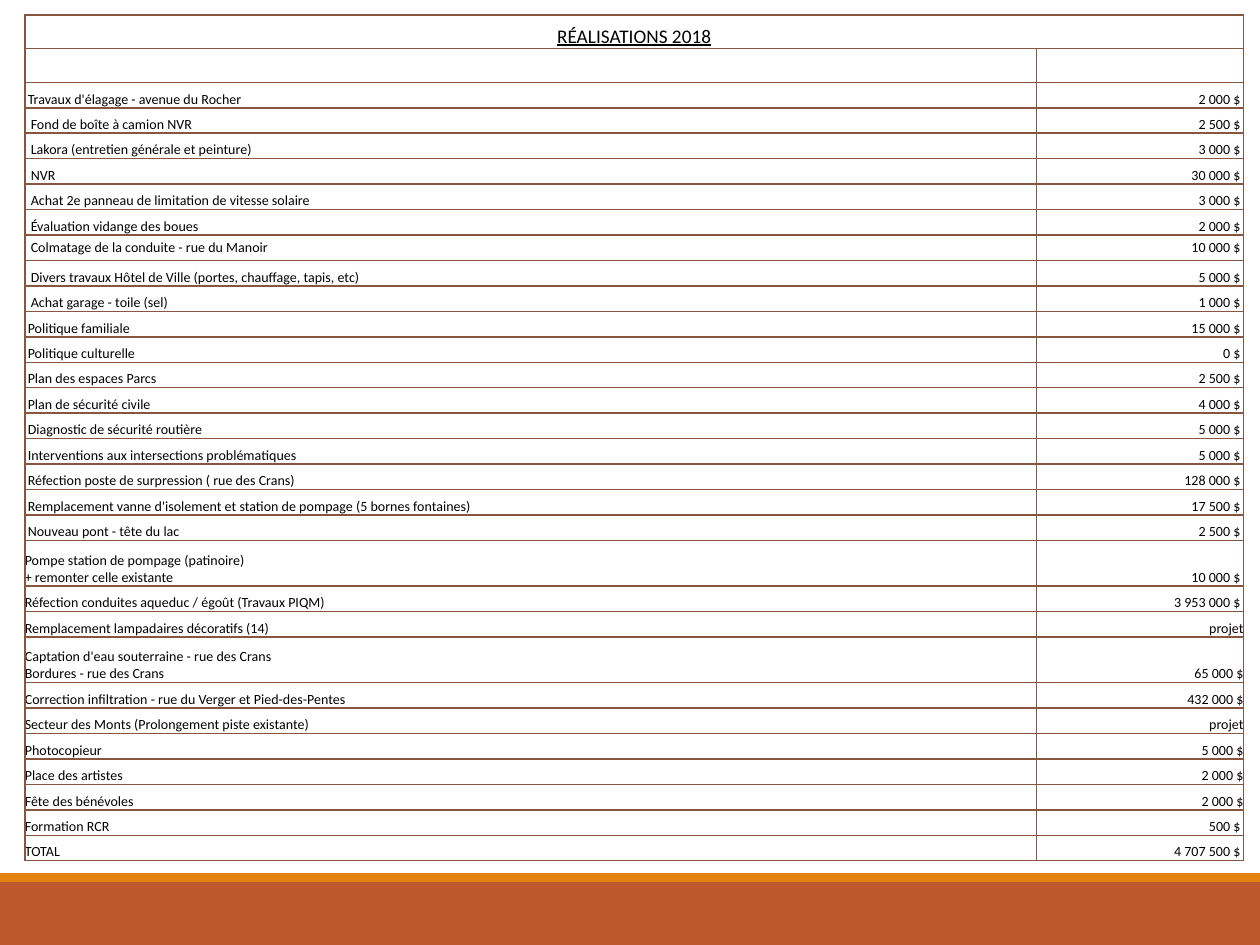
from lxml import etree
from pptx import Presentation
from pptx import util as u
from pptx.dml.color import RGBColor
from pptx.enum import shapes, text
from pptx.oxml import ns

COLOURS = {"band": "BD582C", "stripe": "E48312", "border": "865640", "ink": "000000"}
SPACE = 0.06  # width of one indent step, in cm

# Rows grouped by (left indent steps, right indent steps)
GROUPS = [
    ((1, 1), [("Travaux d'élagage - avenue du Rocher", "2 000 $")]),
    ((2, 1), [
        ("Fond de boîte à camion NVR", "2 500 $"),
        ("Lakora (entretien générale et peinture)", "3 000 $"),
        ("NVR", "30 000 $"),
        ("Achat 2e panneau de limitation de vitesse solaire", "3 000 $"),
        ("Évaluation vidange des boues", "2 000 $"),
        ("Colmatage de la conduite - rue du Manoir", "10 000 $"),
        ("Divers travaux Hôtel de Ville (portes, chauffage, tapis, etc)", "5 000 $"),
        ("Achat garage - toile (sel)", "1 000 $"),
    ]),
    ((1, 1), [
        ("Politique familiale", "15 000 $"),
        ("Politique culturelle", "0 $"),
        ("Plan des espaces Parcs", "2 500 $"),
        ("Plan de sécurité civile", "4 000 $"),
        ("Diagnostic de sécurité routière", "5 000 $"),
        ("Interventions aux intersections problématiques", "5 000 $"),
        ("Réfection poste de surpression ( rue des Crans)", "128 000 $"),
        ("Remplacement vanne d'isolement et station de pompage (5 bornes fontaines)",
         "17 500 $"),
        ("Nouveau pont - tête du lac", "2 500 $"),
    ]),
    ((0, 1), [
        ("Pompe station de pompage (patinoire)\v+ remonter celle existante", "10 000 $"),
        ("Réfection conduites aqueduc / égoût (Travaux PIQM)", "3 953 000 $"),
    ]),
    ((0, 0), [
        ("Remplacement lampadaires décoratifs (14)", "projet"),
        ("Captation d'eau souterraine - rue des Crans\vBordures - rue des Crans", "65 000 $"),
        ("Correction infiltration - rue du Verger et Pied-des-Pentes", "432 000 $"),
        ("Secteur des Monts (Prolongement piste existante)", "projet"),
        ("Photocopieur", "5 000 $"),
        ("Place des artistes", "2 000 $"),
        ("Fête des bénévoles", "2 000 $"),
    ]),
    ((0, 1), [("Formation RCR", "500 $"), ("TOTAL", "4 707 500 $")]),
]
CENTRED_ITEM = "Colmatage de la conduite - rue du Manoir"


class BudgetSlide:
    def __init__(self, slide, font="Calibri", colours=COLOURS):
        self.slide, self.font, self.colours = slide, font, colours

    def colour(self, name):
        return RGBColor.from_string(self.colours[name])

    def bar(self, top, height, colour):
        bar = self.slide.shapes.add_shape(
            shapes.MSO_SHAPE.RECTANGLE, 0, u.Cm(top), u.Cm(25.4), u.Cm(height))
        bar.shadow.inherit = False
        bar.fill.solid()
        bar.fill.fore_color.rgb = self.colour(colour)
        bar.line.fill.background()

    def table(self, left, top, widths, heights):
        table = self.slide.shapes.add_table(
            len(heights), len(widths), u.Cm(left), u.Cm(top),
            u.Cm(sum(widths)), u.Cm(sum(heights))).table
        table.first_row = table.horz_banding = False
        for column, width in zip(table.columns, widths):
            column.width = u.Cm(width)
        for row, height in zip(table.rows, heights):
            row.height = u.Cm(height)
        return table

    def borders(self, cell):
        properties = cell._tc.get_or_add_tcPr()
        for side in ("a:lnL", "a:lnR", "a:lnT", "a:lnB"):
            line = etree.SubElement(properties, ns.qn(side), w=str(u.Pt(1)))
            fill = etree.SubElement(line, ns.qn("a:solidFill"))
            etree.SubElement(fill, ns.qn("a:srgbClr"), val=self.colours["border"])

    def cell(self, cell, words="", size=8, align=text.PP_ALIGN.LEFT, indents=(0, 0),
             anchor=text.MSO_ANCHOR.BOTTOM, underline=False):
        self.borders(cell)
        cell.fill.background()
        cell.vertical_anchor = anchor
        cell.margin_top = cell.margin_bottom = 0
        cell.margin_left, cell.margin_right = (u.Cm(SPACE * steps) for steps in indents)
        cell.text_frame.text = words
        paragraph = cell.text_frame.paragraphs[0]
        paragraph.alignment = align
        for run in paragraph.runs:
            run.font.name, run.font.size = self.font, u.Pt(size)
            run.font.underline = underline
            run.font.color.rgb = self.colour("ink")
        if not words:  # keeps an empty row from growing to the default text size
            etree.SubElement(paragraph._p, ns.qn("a:endParaRPr"), sz=str(size * 100))


def main():
    presentation = Presentation()
    presentation.slide_width, presentation.slide_height = u.Cm(25.4), u.Cm(19.05)
    page = BudgetSlide(presentation.slides.add_slide(presentation.slide_layouts[6]))
    page.bar(17.78, 1.27, "band")
    page.bar(17.6, 0.18, "stripe")

    items = [(indents, *item) for indents, group in GROUPS for item in group]
    heading, double, total = 0.68, 0.92, 17.07
    doubles = sum("\v" in label for _, label, _ in items)
    single = (total - 2 * heading - doubles * double) / (len(items) - doubles)
    heights = [heading] * 2 + [double if "\v" in label else single for _, label, _ in items]
    table = page.table(0.5, 0.3, (20.4, 4.17), heights)

    table.cell(0, 0).merge(table.cell(0, 1))
    page.cell(table.cell(0, 0), "RÉALISATIONS 2018", 11, text.PP_ALIGN.CENTER, underline=True)
    for blank in (table.cell(0, 1), table.cell(1, 0), table.cell(1, 1)):
        page.cell(blank)
    for row, (indents, label, amount) in enumerate(items, start=2):
        anchor = text.MSO_ANCHOR.MIDDLE if label == CENTRED_ITEM else text.MSO_ANCHOR.BOTTOM
        page.cell(table.cell(row, 0), label, indents=(indents[0], 0), anchor=anchor)
        page.cell(table.cell(row, 1), amount, align=text.PP_ALIGN.RIGHT,
                  indents=(0, indents[1]), anchor=anchor)

    presentation.save("out.pptx")


if __name__ == "__main__":
    main()
